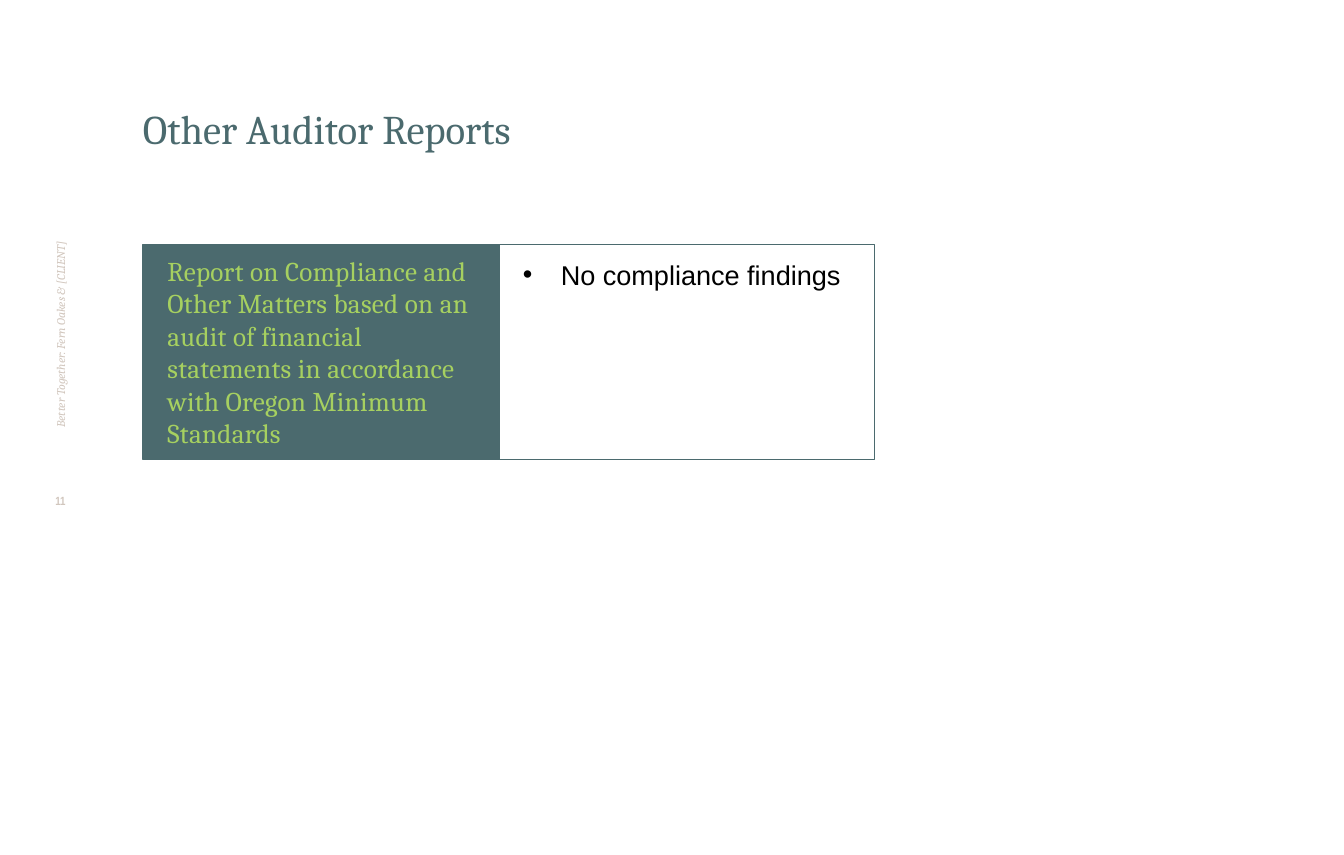
from dataclasses import dataclass

from lxml.etree import SubElement
from pptx import Presentation
from pptx.dml.color import RGBColor
from pptx.enum.text import MSO_ANCHOR, MSO_AUTO_SIZE, PP_ALIGN
from pptx.oxml.ns import qn
from pptx.util import Pt

EMU_PER_PX = 9144
TWO_CONTENT_LAYOUT = 3


@dataclass(frozen=True)
class Theme:
    teal: RGBColor = RGBColor(0x4B, 0x6A, 0x6E)
    lime: RGBColor = RGBColor(0xA6, 0xD0, 0x60)
    sand: RGBColor = RGBColor(0xD1, 0xC6, 0xBD)
    black: RGBColor = RGBColor(0, 0, 0)
    serif: str = "Cambria"
    sans: str = "Arial"
    narrow: str = "Arial Narrow"
    title_size: int = 24
    body_size: int = 16
    footer_size: int = 7
    border: float = 0.75


@dataclass(frozen=True)
class Box:
    left: int
    top: int
    width: int
    height: int


@dataclass(frozen=True)
class Panel:
    placeholder: int
    box: Box
    text: str
    font: str
    color: RGBColor
    fill: RGBColor | None = None
    anchor: MSO_ANCHOR = MSO_ANCHOR.TOP
    inset_top: int = 0
    bullet: bool = False
    tracking: int = 0
    line_pt: int | None = None


THEME = Theme()
PANELS = (
    Panel(1, Box(117, 200, 292, 176),
          "Report on Compliance and Other Matters based on an audit of "
          "financial statements in accordance with Oregon Minimum Standards",
          THEME.serif, THEME.lime, fill=THEME.teal,
          anchor=MSO_ANCHOR.MIDDLE, tracking=20),
    Panel(2, Box(408, 200, 308, 176), "No compliance findings",
          THEME.sans, THEME.black, inset_top=20, bullet=True, line_pt=13),
)


def px(length: int) -> int:
    return length * EMU_PER_PX


def place(shape, box: Box) -> None:
    shape.left, shape.top = px(box.left), px(box.top)
    shape.width, shape.height = px(box.width), px(box.height)


def write(shape, text: str, *, font: str, size: int, color: RGBColor,
          bold: bool = False, italic: bool = False,
          align: PP_ALIGN = PP_ALIGN.LEFT,
          anchor: MSO_ANCHOR = MSO_ANCHOR.TOP,
          inset_side: int = 0, inset_top: int = 0, bullet: bool = False,
          tracking: int = 0, line_pt: int | None = None,
          upward: bool = False) -> None:
    frame = shape.text_frame
    frame.word_wrap = True
    frame.auto_size = MSO_AUTO_SIZE.NONE
    frame.vertical_anchor = anchor
    frame.margin_left = frame.margin_right = px(inset_side)
    frame.margin_top, frame.margin_bottom = px(inset_top), 0
    if upward:
        frame._txBody.bodyPr.set("vert", "vert270")

    paragraph = frame.paragraphs[0]
    properties = paragraph._p.get_or_add_pPr()
    indent = px(31) if bullet else 0
    properties.set("marL", str(indent))
    properties.set("indent", str(-indent))
    if bullet:
        SubElement(properties, qn("a:buFont")).set("typeface", THEME.sans)
        SubElement(properties, qn("a:buChar")).set("char", "•")
    else:
        SubElement(properties, qn("a:buNone"))
    paragraph.alignment = align
    paragraph.space_before = Pt(0)
    if line_pt:
        paragraph.line_spacing = Pt(line_pt)

    run = paragraph.add_run()
    run.text = text
    run.font.name = font
    run.font.size = Pt(size)
    run.font.bold = bold
    run.font.italic = italic
    run.font.color.rgb = color
    if tracking:
        run._r.get_or_add_rPr().set("spc", str(tracking))


def add_label(slide, box: Box, text: str, **text_format) -> None:
    label = slide.shapes.add_textbox(0, 0, 0, 0)
    place(label, box)
    write(label, text, size=THEME.footer_size, color=THEME.sand, **text_format)


def draw_panel(slide, panel: Panel) -> None:
    body = slide.placeholders[panel.placeholder]
    place(body, panel.box)
    if panel.fill is None:
        body.fill.background()
    else:
        body.fill.solid()
        body.fill.fore_color.rgb = panel.fill
    body.line.color.rgb = THEME.teal
    body.line.width = Pt(THEME.border)
    write(body, panel.text, font=panel.font, size=THEME.body_size,
          color=panel.color, anchor=panel.anchor, inset_side=20,
          inset_top=panel.inset_top, bullet=panel.bullet,
          tracking=panel.tracking, line_pt=panel.line_pt)


def main() -> None:
    deck = Presentation()
    deck.slide_width, deck.slide_height = px(1100), px(700)
    slide = deck.slides.add_slide(deck.slide_layouts[TWO_CONTENT_LAYOUT])

    add_label(slide, Box(31, 50, 37, 300),
              "Better Together: Fern Oakes & [CLIENT]", font=THEME.serif,
              italic=True, anchor=MSO_ANCHOR.MIDDLE, upward=True)
    add_label(slide, Box(31, 404, 37, 38), "11", font=THEME.narrow,
              bold=True, align=PP_ALIGN.CENTER)

    title = slide.shapes.title
    place(title, Box(117, 50, 908, 75))
    write(title, "Other Auditor Reports", font=THEME.serif,
          size=THEME.title_size, color=THEME.teal, anchor=MSO_ANCHOR.BOTTOM)

    for panel in PANELS:
        draw_panel(slide, panel)

    deck.save("out.pptx")


if __name__ == "__main__":
    main()
